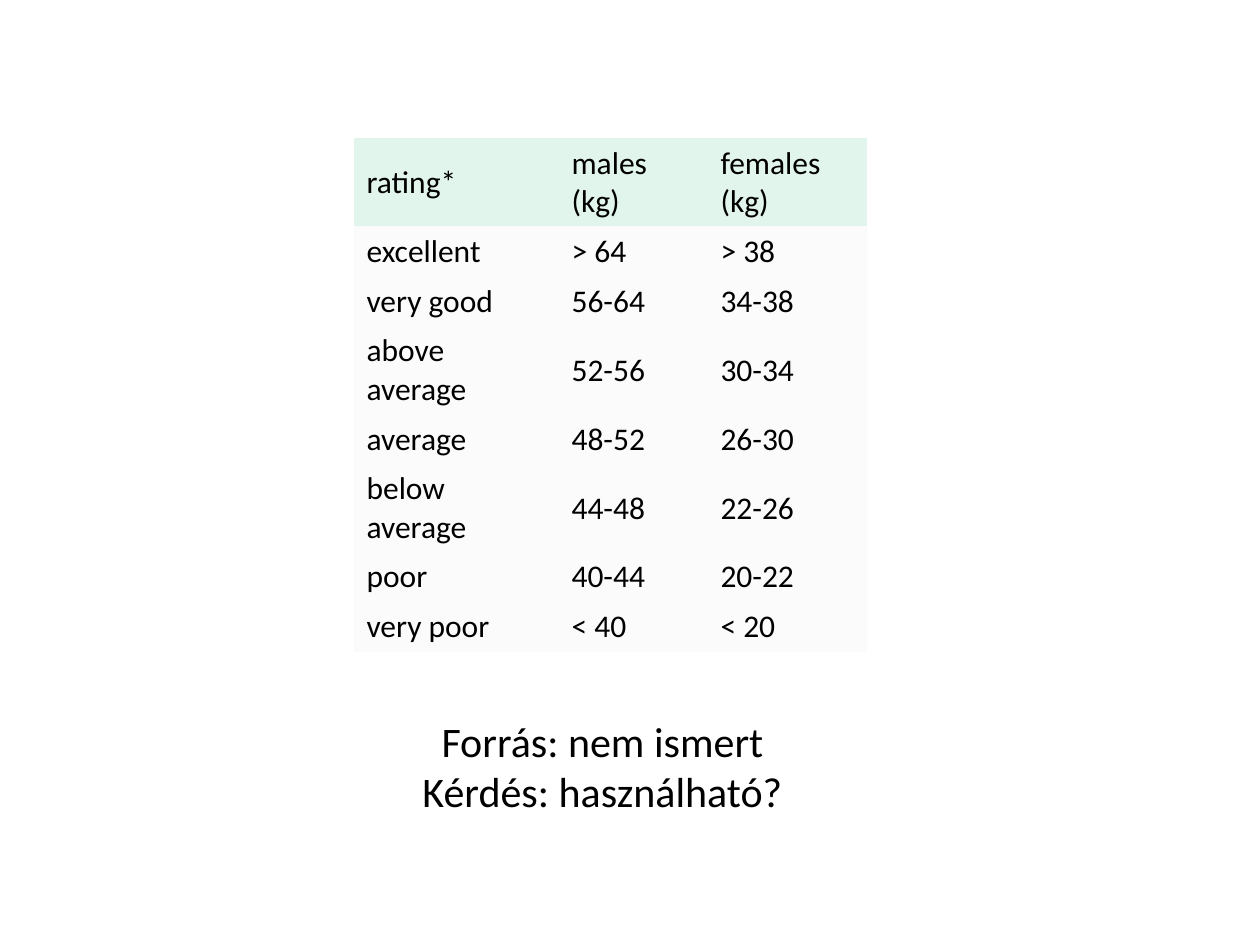
from dataclasses import dataclass

from pptx import Presentation
from pptx import util as u
from pptx.dml.color import RGBColor
from pptx.enum import text
from pptx.oxml.ns import qn


@dataclass(frozen=True)
class Theme:
    font: str = "Calibri"
    ink: RGBColor = RGBColor(0x00, 0x00, 0x00)
    header_fill: RGBColor = RGBColor(0xE2, 0xF5, 0xEC)
    body_fill: RGBColor = RGBColor(0xFB, 0xFB, 0xFB)
    table_size: u.Pt = u.Pt(18)
    note_size: u.Pt = u.Pt(24)


theme = Theme()
NO_STYLE_NO_GRID = "{2D5ABB26-0587-4C30-8999-92F81FD0307C}"


def px(length):
    return u.Emu(round(length * 914400 / 126))


def set_font(paragraph, size):
    paragraph.font.name = theme.font
    paragraph.font.size = size
    paragraph.font.color.rgb = theme.ink


presentation = Presentation()
presentation.slide_width, presentation.slide_height = px(1260), px(945)
slide = presentation.slides.add_slide(presentation.slide_layouts[6])

# Rating table
ratings = [
    ("rating*", "males (kg)", "females (kg)"),
    ("excellent", "> 64", "> 38"),
    ("very good", "56-64", "34-38"),
    ("above average", "52-56", "30-34"),
    ("average", "48-52", "26-30"),
    ("below average", "44-48", "22-26"),
    ("poor", "40-44", "20-22"),
    ("very poor", "< 40", "< 20"),
]
column_widths = [205, 149, 159]
one_line, two_lines = 50, 88
row_heights = [two_lines if row in (0, 3, 5) else one_line for row in range(len(ratings))]

table = slide.shapes.add_table(
    len(ratings), len(column_widths), px(354), px(138),
    px(sum(column_widths)), px(sum(row_heights)),
).table
table.first_row = table.horz_banding = False
table._tbl.tblPr.find(qn("a:tableStyleId")).text = NO_STYLE_NO_GRID

for column, width in zip(table.columns, column_widths):
    column.width = px(width)
for row_index, (values, height) in enumerate(zip(ratings, row_heights)):
    table.rows[row_index].height = px(height)
    for column_index, value in enumerate(values):
        cell = table.cell(row_index, column_index)
        cell.text = value
        cell.vertical_anchor = text.MSO_ANCHOR.MIDDLE
        cell.margin_top, cell.margin_bottom = px(6), px(5)
        cell.fill.solid()
        cell.fill.fore_color.rgb = theme.body_fill if row_index else theme.header_fill
        set_font(cell.text_frame.paragraphs[0], theme.table_size)

# Source and question below the table
note = slide.shapes.add_textbox(px(223), px(709), px(759), px(115)).text_frame
note.word_wrap = True
note.auto_size = text.MSO_AUTO_SIZE.SHAPE_TO_FIT_TEXT
note.text = "Forrás: nem ismert\nKérdés: használható?"
for paragraph in note.paragraphs:
    paragraph.alignment = text.PP_ALIGN.CENTER
    set_font(paragraph, theme.note_size)

presentation.save("out.pptx")
